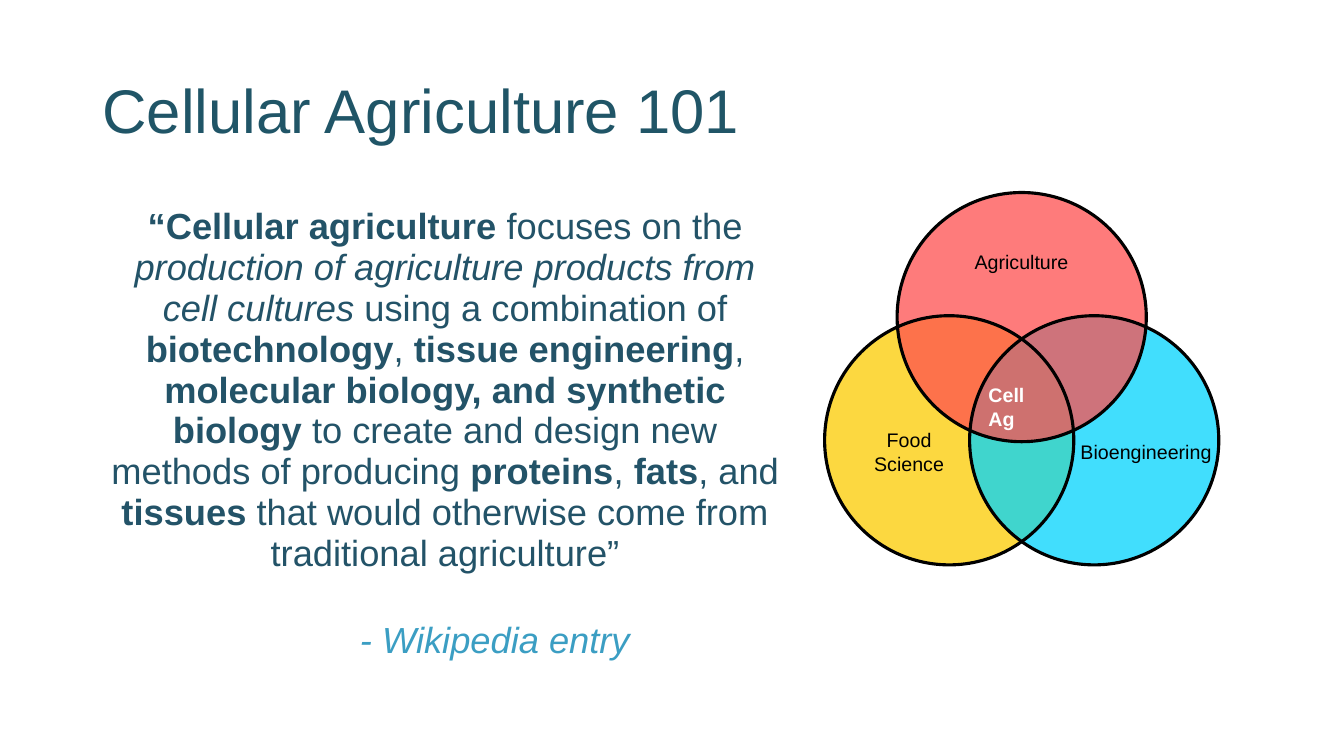
from dataclasses import dataclass

from lxml import etree
from pptx import Presentation
from pptx.dml.color import RGBColor
from pptx.enum.shapes import MSO_SHAPE
from pptx.enum.text import MSO_ANCHOR, MSO_AUTO_SIZE, PP_ALIGN
from pptx.oxml.ns import qn
from pptx.util import Pt

OVAL = MSO_SHAPE.OVAL
LEFT, CENTER = PP_ALIGN.LEFT, PP_ALIGN.CENTER
TOP, MIDDLE = MSO_ANCHOR.TOP, MSO_ANCHOR.MIDDLE
NO_AUTOFIT = MSO_AUTO_SIZE.NONE


@dataclass(frozen=True)
class Theme:
    font: str = "Arial"
    title: str = "205567"
    body: str = "235368"
    credit: str = "3B9EC3"
    food: str = "FBCC00"
    bio: str = "02D4FD"
    agri: str = "FE5050"
    black: str = "000000"
    white: str = "FFFFFF"
    title_size: float = 44
    body_size: float = 25.9
    label_size: float = 14


THEME = Theme()

DIAMETER = 178
APEX_X, APEX_Y = 640.8, 137.5
HALF_SPREAD, DROP = 51.8, 88
CIRCLES = [
    (APEX_X - HALF_SPREAD, APEX_Y + DROP, THEME.food),
    (APEX_X + HALF_SPREAD, APEX_Y + DROP, THEME.bio),
    (APEX_X, APEX_Y, THEME.agri),
]

# Asterisks mark bold, underscores mark italic.
QUOTE = [
    ("“Cellular agriculture ", "b"),
    ("focuses on the ", ""),
    ("production of agriculture products from cell cultures", "i"),
    (" using a combination of ", ""),
    ("biotechnology", "b"),
    (", ", ""),
    ("tissue engineering", "b"),
    (", ", ""),
    ("molecular biology, and synthetic biology ", "b"),
    ("to create and design new methods of producing ", ""),
    ("proteins", "b"),
    (", ", ""),
    ("fats", "b"),
    (", and ", ""),
    ("tissues", "b"),
    (" that would otherwise come from traditional agriculture”", ""),
]


def add_run(p, text, *, size, color, bold=False, italic=False):
    r = p.add_run()
    r.text = text
    r.font.name = THEME.font
    r.font.size = Pt(size)
    r.font.bold = bold
    r.font.italic = italic
    r.font.color.rgb = RGBColor.from_string(color)


def place(sp, x, y, w, h):
    sp.left, sp.top, sp.width, sp.height = Pt(x), Pt(y), Pt(w), Pt(h)


def format_paragraph(p, align, line_spacing, before=0, indent=0):
    """Remove the bullet and set alignment, spacing and left margin."""
    pPr = p._p.get_or_add_pPr()
    pPr.set("marL", str(Pt(indent)))
    pPr.set("indent", "0")
    etree.SubElement(pPr, qn("a:buNone"))
    p.alignment = align
    p.line_spacing = line_spacing
    p.space_before = Pt(before)


def fill_title(sp, text):
    place(sp, 66, 28.8, 828, 104.4)
    tf = sp.text_frame
    tf.auto_size = NO_AUTOFIT
    tf.vertical_anchor = MIDDLE
    p = tf.paragraphs[0]
    format_paragraph(p, LEFT, 0.9)
    add_run(p, text, size=THEME.title_size, color=THEME.title)


def fill_body(sp, quote, credit):
    place(sp, 66, 144, 504, 342.72)
    tf = sp.text_frame
    tf.auto_size = NO_AUTOFIT
    tf.vertical_anchor = TOP
    p = tf.paragraphs[0]
    format_paragraph(p, CENTER, 0.94)
    for text, style in quote:
        add_run(p, text, size=THEME.body_size, color=THEME.body,
                bold=style == "b", italic=style == "i")
    p = tf.add_paragraph()
    format_paragraph(p, CENTER, 0.94, before=33, indent=71)
    add_run(p, credit, size=THEME.body_size, color=THEME.credit, italic=True)


def add_circle(shapes, x, y, fill=None):
    """Add a translucent disc, or a black outline when no fill is given."""
    sp = shapes.add_shape(OVAL, Pt(x), Pt(y), Pt(DIAMETER), Pt(DIAMETER))
    sp.shadow.inherit = False
    if fill:
        sp.fill.solid()
        sp.fill.fore_color.rgb = RGBColor.from_string(fill)
        color = sp.fill._xPr.find(qn("a:solidFill"))[0]
        etree.SubElement(color, qn("a:alpha"), val="75000")
        sp.line.fill.background()
    else:
        sp.fill.background()
        sp.line.color.rgb = RGBColor.from_string(THEME.black)
        sp.line.width = Pt(2.25)


def add_label(shapes, lines, x, y, w, h, *, align=CENTER, wrap=False,
              color=THEME.black, bold=False):
    sp = shapes.add_textbox(Pt(x), Pt(y), Pt(w), Pt(h))
    tf = sp.text_frame
    tf.word_wrap = wrap
    for i, text in enumerate(lines):
        p = tf.add_paragraph() if i else tf.paragraphs[0]
        p.alignment = align
        add_run(p, text, size=THEME.label_size, color=color, bold=bold)


def add_venn(s):
    shapes = s.shapes.add_group_shape().shapes
    for x, y, fill in CIRCLES:
        add_circle(shapes, x, y, fill)
    add_label(shapes, ["Cell Ag"], 699, 270, 61, 41, align=LEFT, wrap=True,
              color=THEME.white, bold=True)
    add_label(shapes, ["Agriculture"], 687.6, 175, 84.2, 29)
    add_label(shapes, ["Food", "Science"], 617, 302.4, 64.8, 51)
    add_label(shapes, ["Bioengineering"], 763.2, 311, 110.9, 29)
    for x, y, _ in CIRCLES:
        add_circle(shapes, x, y)


def main():
    prs = Presentation()
    prs.slide_width, prs.slide_height = Pt(960), Pt(540)
    s = prs.slides.add_slide(prs.slide_layouts[1])
    fill_title(s.shapes.title, "Cellular Agriculture 101")
    fill_body(s.placeholders[1], QUOTE, "- Wikipedia entry")
    add_venn(s)
    prs.save("out.pptx")


if __name__ == "__main__":
    main()
